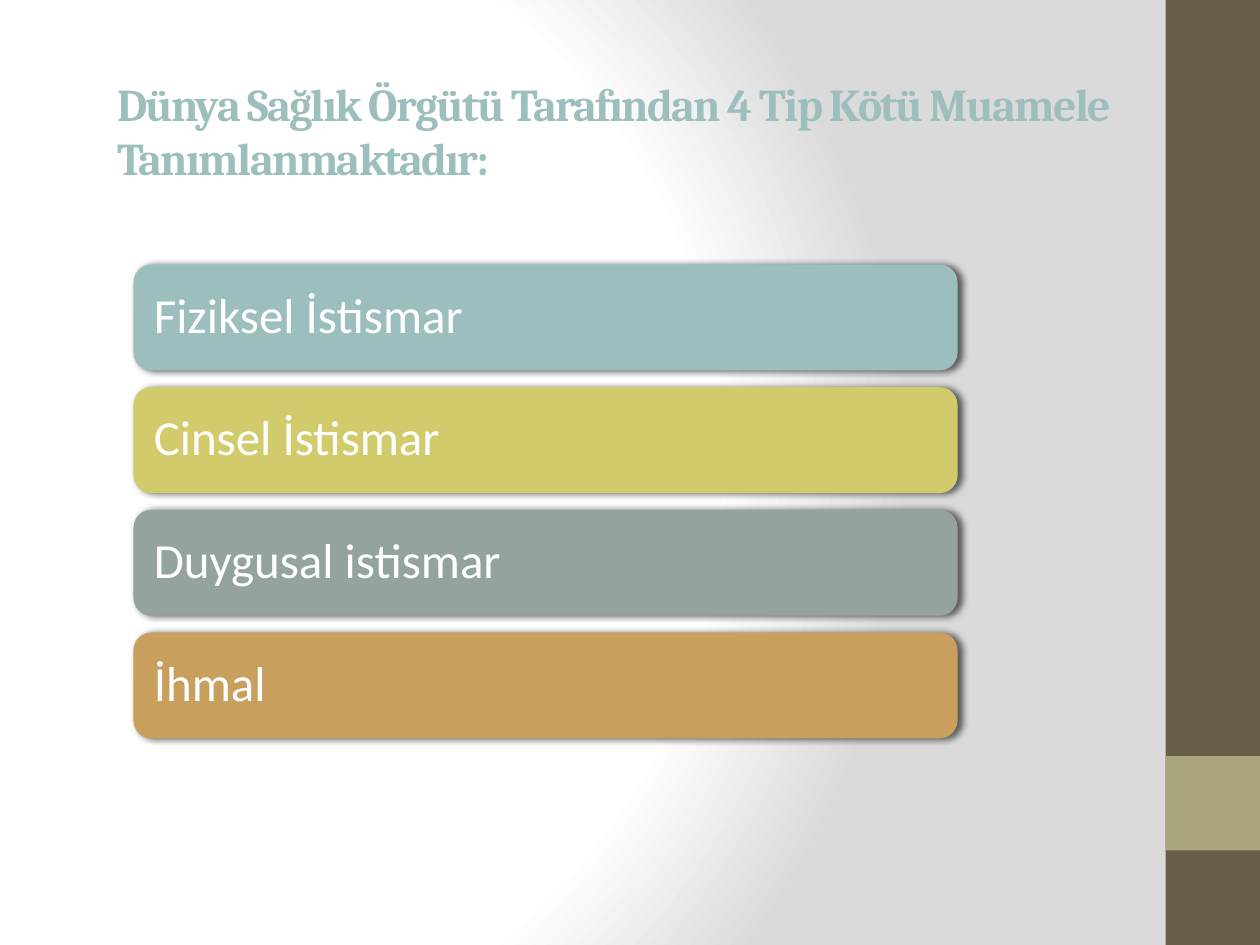
from dataclasses import dataclass

from pptx import Presentation
from pptx.dml.color import RGBColor
from pptx.enum.shapes import MSO_SHAPE
from pptx.enum.text import MSO_ANCHOR, MSO_AUTO_SIZE, PP_ALIGN
from pptx.oxml import parse_xml
from pptx.oxml.ns import nsdecls
from pptx.util import Inches, Pt

RECTANGLE = MSO_SHAPE.RECTANGLE
ROUNDED = MSO_SHAPE.ROUNDED_RECTANGLE
MIDDLE = MSO_ANCHOR.MIDDLE
LEFT = PP_ALIGN.LEFT
NO_AUTOFIT = MSO_AUTO_SIZE.NONE
TITLE_ONLY = 5


@dataclass(frozen=True)
class Theme:
    title_font: str = "Cambria"
    body_font: str = "Calibri"
    title_size: int = 26
    body_size: int = 28
    title: str = "9CBEBD"
    bar_text: str = "FFFFFF"
    sidebar: str = "675E47"
    sidebar_accent: str = "A9A57C"
    background_center: str = "FFFFFF"
    background_edge: str = "DADADA"
    shadow: str = "000000"


THEME = Theme()
TITLE = "Dünya Sağlık Örgütü Tarafından 4 Tip Kötü Muamele Tanımlanmaktadır:"
MALTREATMENT_TYPES = [
    ("Fiziksel İstismar", "9CBEBD"),
    ("Cinsel İstismar", "D2CB6C"),
    ("Duygusal istismar", "95A39D"),
    ("İhmal", "C89F5D"),
]


def add_background(slide):
    stops = [(0, THEME.background_center), (75, THEME.background_center),
             (100, THEME.background_edge)]
    stop_xml = "".join(
        f'<a:gs pos="{position * 1000}"><a:srgbClr val="{color}"/></a:gs>'
        for position, color in stops)
    slide.element.cSld.insert(0, parse_xml(
        f'<p:bg {nsdecls("p", "a")}><p:bgPr><a:gradFill rotWithShape="1">'
        f'<a:gsLst>{stop_xml}</a:gsLst><a:path path="circle">'
        '<a:fillToRect l="20000" t="50000" r="100000" b="50000"/></a:path>'
        '</a:gradFill><a:effectLst/></p:bgPr></p:bg>'))


def add_block(slide, kind, color, left, top, width, height):
    shape = slide.shapes.add_shape(kind, left, top, width, height)
    shape.shadow.inherit = False
    shape.fill.solid()
    shape.fill.fore_color.rgb = RGBColor.from_string(color)
    shape.line.fill.background()
    return shape


def add_shadow(shape):
    """Cast a soft shadow to the right of the shape."""
    effects = shape.element.spPr.find(
        "{http://schemas.openxmlformats.org/drawingml/2006/main}effectLst")
    effects.append(parse_xml(
        f'<a:outerShdw {nsdecls("a")} blurRad="{Pt(4)}" dist="{Pt(2)}" dir="0" '
        f'algn="ctr" rotWithShape="0"><a:srgbClr val="{THEME.shadow}">'
        '<a:alpha val="60000"/></a:srgbClr></a:outerShdw>'))


def add_text(shape, text, font, size, color, bold=False):
    frame = shape.text_frame
    frame.word_wrap = True
    frame.auto_size = NO_AUTOFIT
    frame.vertical_anchor = MIDDLE
    paragraph = frame.paragraphs[0]
    paragraph.alignment = LEFT
    run = paragraph.add_run()
    run.text = text
    run.font.name = font
    run.font.size = Pt(size)
    run.font.bold = bold
    run.font.color.rgb = RGBColor.from_string(color)
    return paragraph, run


def add_sidebar(slide, left, top, width, height):
    add_block(slide, RECTANGLE, THEME.sidebar, left, top, width, height)
    add_block(slide, RECTANGLE, THEME.sidebar_accent,
              left, top + int(height * 0.8), width, width)


def place_title(slide, left, top, width, height):
    title = slide.shapes.title
    title.left, title.top, title.width, title.height = left, top, width, height
    _, run = add_text(title, TITLE, THEME.title_font, THEME.title_size,
                      THEME.title, bold=True)
    run.font.element.set("spc", "-100") if hasattr(run.font, "element") else \
        run._r.get_or_add_rPr().set("spc", "-100")


def add_bar_list(slide, left, top, width, height):
    """Stack one bar per maltreatment type, evenly spaced over the box."""
    bar_height = Inches(0.84)
    step = (height - bar_height) // (len(MALTREATMENT_TYPES) - 1)
    for index, (label, color) in enumerate(MALTREATMENT_TYPES):
        bar = add_block(slide, ROUNDED, color,
                        left, top + index * step, width, bar_height)
        add_shadow(bar)
        paragraph, _ = add_text(bar, label, THEME.body_font, THEME.body_size,
                                THEME.bar_text)
        paragraph.line_spacing = 0.9
        # The rounded corners add their own 0.04 inch to the inset.
        bar.text_frame.margin_left = bar.text_frame.margin_right = Inches(0.12)


def main():
    presentation = Presentation()
    presentation.slide_width = Inches(10)
    presentation.slide_height = Inches(7.5)
    slide = presentation.slides.add_slide(presentation.slide_layouts[TITLE_ONLY])
    add_background(slide)
    add_sidebar(slide, Inches(9.25), 0, Inches(0.75), Inches(7.5))
    place_title(slide, Inches(0.83), Inches(0.6), Inches(8.22), Inches(0.87))
    add_bar_list(slide, Inches(1.06), Inches(2.1), Inches(6.54), Inches(3.76))
    presentation.save("out.pptx")


if __name__ == "__main__":
    main()
